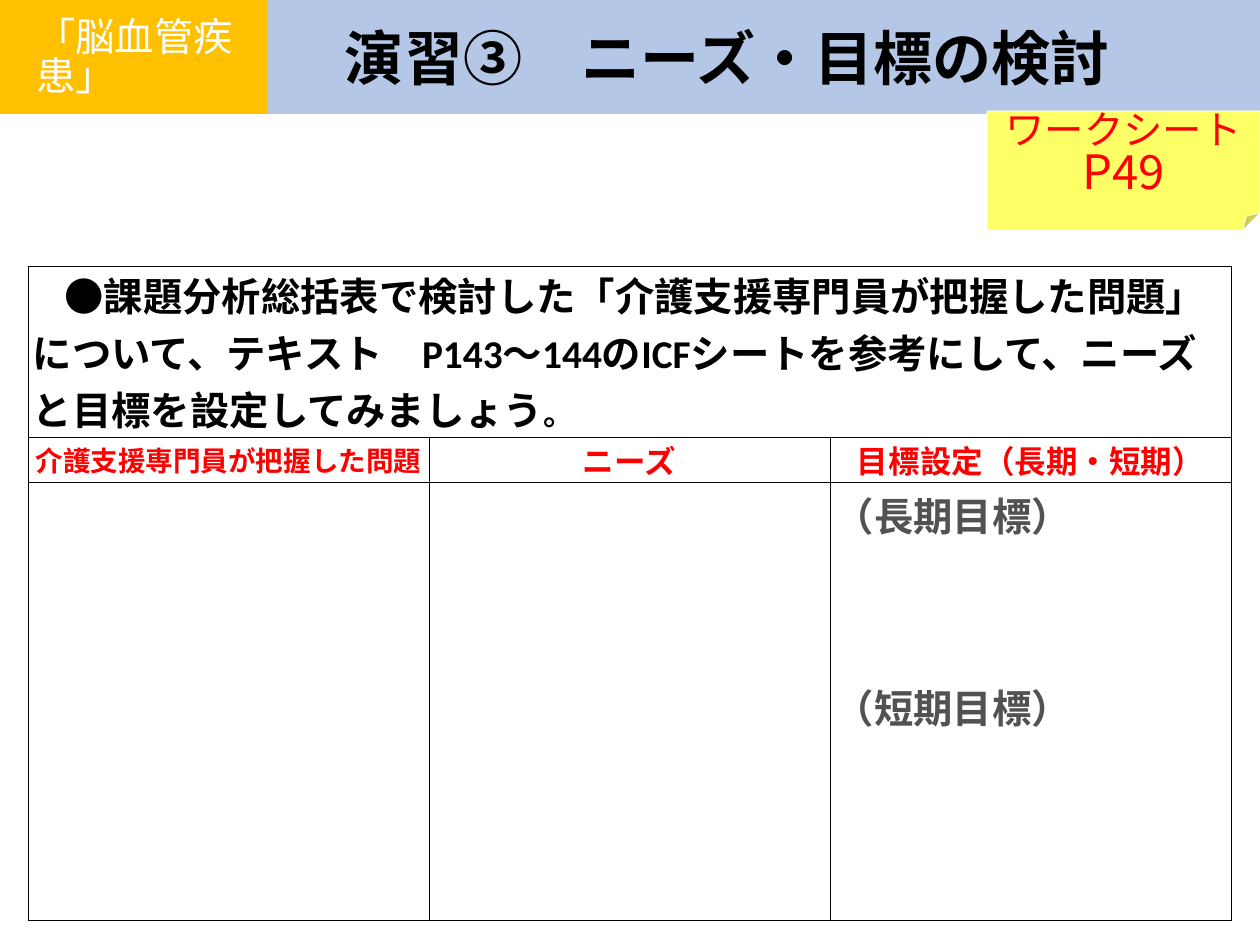
"""Build the exercise slide on setting needs and goals."""
from lxml import etree
from pptx import Presentation
from pptx import util as u
from pptx.dml.color import RGBColor
from pptx.enum import shapes, text
from pptx.oxml.ns import qn

PX = 12900
CJK = "Noto Sans CJK JP"
COLORS = {"black": "000000", "white": "FFFFFF", "red": "FF0000", "gray": "525252",
          "blue": "B4C7E7", "orange": "FFC000", "yellow": "FFFF66"}


def add_span(para, words, size, font, color, bold=False):
    span = para.add_run()
    span.text = words
    span.font.size = u.Pt(size)
    span.font.name = font
    span.font.bold = bold
    span.font.color.rgb = RGBColor.from_string(COLORS[color])
    east_asian = etree.SubElement(span.font._element, qn("a:ea"))
    east_asian.set("typeface", CJK)


def add_panel(preset, bounds, fill, margins, anchor):
    panel = page.shapes.add_shape(preset, *[value * PX for value in bounds])
    panel.shadow.inherit = False
    panel.fill.solid()
    panel.fill.fore_color.rgb = RGBColor.from_string(COLORS[fill])
    panel.line.fill.background()
    frame = panel.text_frame
    frame.word_wrap = True
    frame.vertical_anchor = anchor
    frame.margin_left, frame.margin_top, frame.margin_right, frame.margin_bottom = [
        value * PX for value in margins]
    frame.paragraphs[0].alignment = text.PP_ALIGN.LEFT
    return panel


deck = Presentation()
deck.slide_width = 1260 * PX
deck.slide_height = 945 * PX
page = deck.slides.add_slide(deck.slide_layouts[6])

columns = [401, 401, 401]
rows = [171, 45, 438]
grid_frame = page.shapes.add_table(len(rows), len(columns), 28 * PX, 266 * PX,
                                   sum(columns) * PX, sum(rows) * PX)
grid = grid_frame.table
for column, width in zip(grid.columns, columns):
    column.width = width * PX
for row, height in zip(grid.rows, rows):
    row.height = height * PX
for cell in grid.iter_cells():
    cell.margin_left = cell.margin_right = 5 * PX
    cell.margin_top = cell.margin_bottom = 0
    cell.vertical_anchor = text.MSO_ANCHOR.MIDDLE
    properties = cell._tc.get_or_add_tcPr()
    for side in ("lnL", "lnR", "lnT", "lnB"):
        border = etree.SubElement(properties, qn(f"a:{side}"), w=str(u.Pt(1)))
        solid = etree.SubElement(border, qn("a:solidFill"))
        etree.SubElement(solid, qn("a:srgbClr"), val=COLORS["black"])
    cell.fill.solid()
    cell.fill.fore_color.rgb = RGBColor.from_string(COLORS["white"])

grid.cell(0, 0).merge(grid.cell(0, 2))
para = grid.cell(0, 0).text_frame.paragraphs[0]
para._p.get_or_add_pPr().set("indent", str(u.Pt(32)))
add_span(para, "●課題分析総括表で検討した「介護支援専門員が把握した問題」について、"
         "テキスト　P143～144のICFシートを参考にして、ニーズと目標を設定してみましょう",
         40, "Calibri", "black", True)
add_span(para, "。", 32, "Calibri", "black", True)

headings = [("介護支援専門員が把握した問題", 28), ("ニーズ", 32), ("目標設定（長期・短期）", 32)]
for index, (heading, size) in enumerate(headings):
    para = grid.cell(1, index).text_frame.paragraphs[0]
    para.alignment = text.PP_ALIGN.CENTER
    add_span(para, heading, size, "Cambria", "red", True)

goals = grid.cell(2, 2)
goals.vertical_anchor = text.MSO_ANCHOR.TOP
goals.margin_top = goals.margin_bottom = 3 * PX
long_term = goals.text_frame.paragraphs[0]
short_term = goals.text_frame.add_paragraph()
short_term.space_before = u.Pt(137)
for para, goal in ((long_term, "（長期目標）"), (short_term, "（短期目標）")):
    para.alignment = text.PP_ALIGN.JUSTIFY
    add_span(para, goal, 40, "Cambria", "gray", True)

title = add_panel(shapes.MSO_SHAPE.RECTANGLE, (268, 0, 992, 114), "blue",
                  (77, 3, 7, 3), text.MSO_ANCHOR.MIDDLE)
add_span(title.text_frame.paragraphs[0], "演習③　ニーズ・目標の検討", 60, "Arial", "black", True)

topic = add_panel(shapes.MSO_SHAPE.RECTANGLE, (0, 0, 268, 114), "orange",
                  (36, 7, 7, 3), text.MSO_ANCHOR.MIDDLE)
para = topic.text_frame.paragraphs[0]
para.line_spacing = 0.83
add_span(para, "「脳血管疾患」", 40, CJK, "white")

note = add_panel(shapes.MSO_SHAPE.FOLDED_CORNER, (987, 111, 273, 119), "yellow",
                 (0, 2, 0, 1), text.MSO_ANCHOR.TOP)
fold = note._element.spPr.find(qn("a:prstGeom")).get_or_add_avLst()
etree.SubElement(fold, qn("a:gd"), name="adj", fmla="val 14400")
note.line.color.rgb = RGBColor.from_string(COLORS["white"])
note.line.width = u.Pt(0.75)
label = note.text_frame.paragraphs[0]
page_number = note.text_frame.add_paragraph()
for para, words, size in ((label, "ワークシート", 40), (page_number, "P49", 48)):
    para.alignment = text.PP_ALIGN.CENTER
    para.line_spacing = 0.83
    add_span(para, words, size, CJK, "red")

deck.save("out.pptx")
